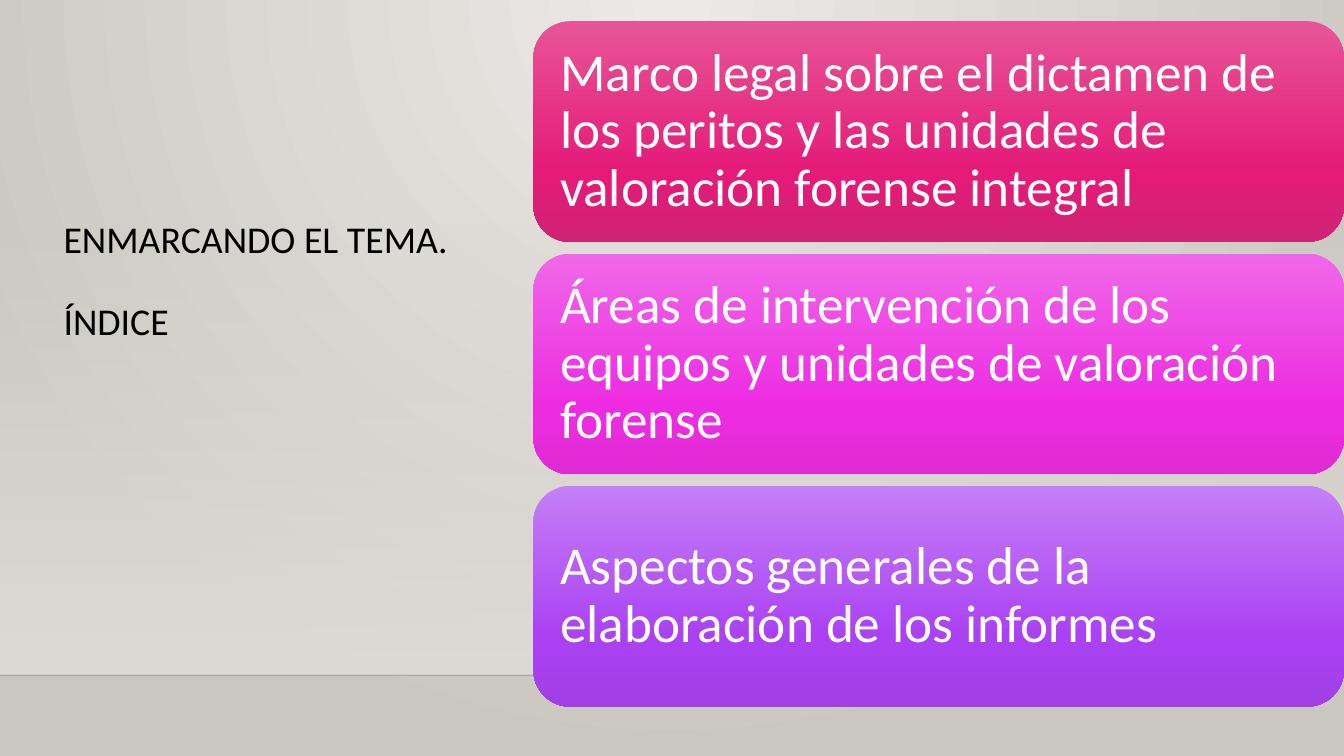
from lxml import etree
from pptx import Presentation
from pptx.dml.color import RGBColor
from pptx.enum import shapes, text
from pptx.oxml.ns import qn
from pptx.util import Inches, Pt


def paint_gradient(fill, element, stops, focus=None):
    """Stops are (position %, colour, opacity %); focus makes it circular."""
    fill.gradient()
    grad = next(element.iter(qn("a:gradFill")))
    for child in list(grad):
        grad.remove(child)
    gs_list = etree.SubElement(grad, qn("a:gsLst"))
    for pos, colour, opacity in stops:
        gs = etree.SubElement(gs_list, qn("a:gs"), pos=str(pos * 1000))
        clr = etree.SubElement(gs, qn("a:srgbClr"), val=colour)
        if opacity < 100:
            etree.SubElement(clr, qn("a:alpha"), val=str(opacity * 1000))
    if focus:
        circle = etree.SubElement(grad, qn("a:path"), path="circle")
        rect = etree.SubElement(circle, qn("a:fillToRect"))
        for side, value in zip("ltrb", focus):
            rect.set(side, str(value * 1000))
    else:
        etree.SubElement(grad, qn("a:lin"), ang="5400000", scaled="0")


def add_run(p, words, size, colour):
    p.line_spacing = 0.9
    p.alignment = text.PP_ALIGN.LEFT
    r = p.add_run()
    r.text = words
    r.font.name = "Calibri"
    r.font.size = Pt(size)
    r.font.color.rgb = RGBColor.from_string(colour)


prs = Presentation()
prs.slide_width, prs.slide_height = Inches(13.33), Inches(7.5)
s = prs.slides.add_slide(prs.slide_layouts[5])
paint_gradient(s.background.fill, s.element,
               [(0, "ECEAE7", 100), (100, "CAC7C1", 100)], (43, 0, 43, 100))

# Wall and floor line
wall = s.shapes.add_shape(shapes.MSO_SHAPE.RECTANGLE, Inches(0), Inches(2.21),
                          Inches(13.33), Inches(4.49))
wall.shadow.inherit = False
wall.line.fill.background()
paint_gradient(wall.fill, wall.element, [(0, "DFDBD5", 0), (100, "DFDBD5", 100)])

floor = s.shapes.add_connector(shapes.MSO_CONNECTOR.STRAIGHT, Inches(0), Inches(6.7),
                               Inches(13.33), Inches(6.7))
floor.line.width = Pt(1)
floor.line.color.rgb = RGBColor.from_string("000001")
floor_colour = next(floor.element.iter(qn("a:srgbClr")))
etree.SubElement(floor_colour, qn("a:alpha"), val="20000")
etree.SubElement(floor.element.spPr, qn("a:effectLst"))

# Title, in front of the wall
title = s.shapes.title
floor.element.addnext(title.element)
title.left, title.top = Inches(0), Inches(2.14)
title.width, title.height = Inches(4.99), Inches(3.3)
tf = title.text_frame
tf.word_wrap = True
tf.auto_size = text.MSO_AUTO_SIZE.NONE
tf.vertical_anchor = text.MSO_ANCHOR.TOP
tf.margin_left = Inches(0.63)
add_run(tf.paragraphs[0], "ENMARCANDO EL TEMA.", 27, "000000")
p = tf.add_paragraph()
p.space_before = Pt(29.6)
add_run(p, "ÍNDICE", 27, "000000")

# Index cards
cards = [
    ("Marco legal sobre el dictamen de los peritos y las unidades de valoración "
     "forense integral", ("E75597", "E51A79", "CF2374")),
    ("Áreas de intervención de los equipos y unidades de valoración forense",
     ("F068E8", "ED2CE2", "E02BD5")),
    ("Aspectos generales de la elaboración de los informes",
     ("C57FF7", "AA41F3", "A13FE5")),
]
for i, (words, colours) in enumerate(cards):
    sp = s.shapes.add_shape(shapes.MSO_SHAPE.ROUNDED_RECTANGLE, Inches(5.29),
                            Inches(0.21 + i * 2.305), Inches(8.04), Inches(2.19))
    sp.shadow.inherit = False
    sp.line.fill.background()
    paint_gradient(sp.fill, sp.element,
                   [(pos, colour, 100) for pos, colour in zip((0, 69, 100), colours)])
    tf = sp.text_frame
    tf.word_wrap = True
    tf.vertical_anchor = text.MSO_ANCHOR.MIDDLE
    # The rounded corners already add 0.11 to each inset
    tf.margin_left = tf.margin_right = Inches(0.16)
    tf.margin_top = tf.margin_bottom = Inches(0.16)
    add_run(tf.paragraphs[0], words, 38, "FFFFFF")

prs.save("out.pptx")
